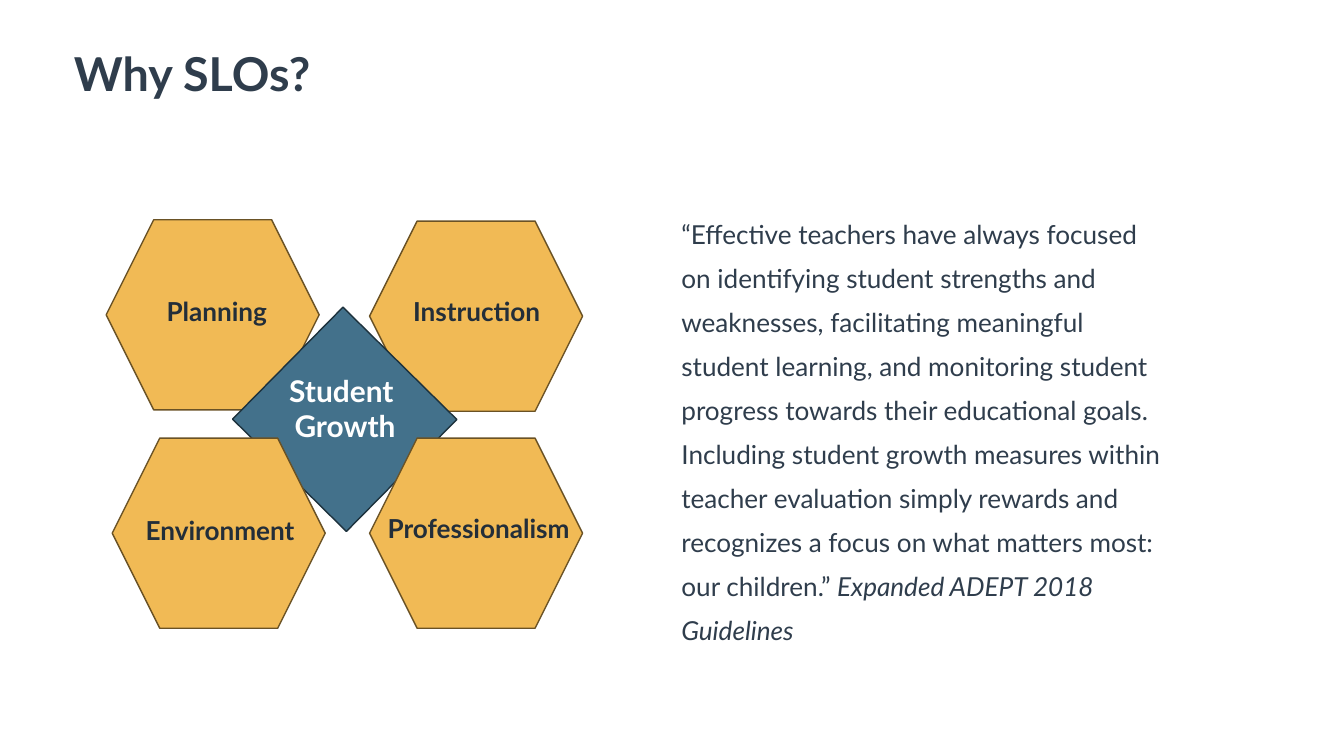
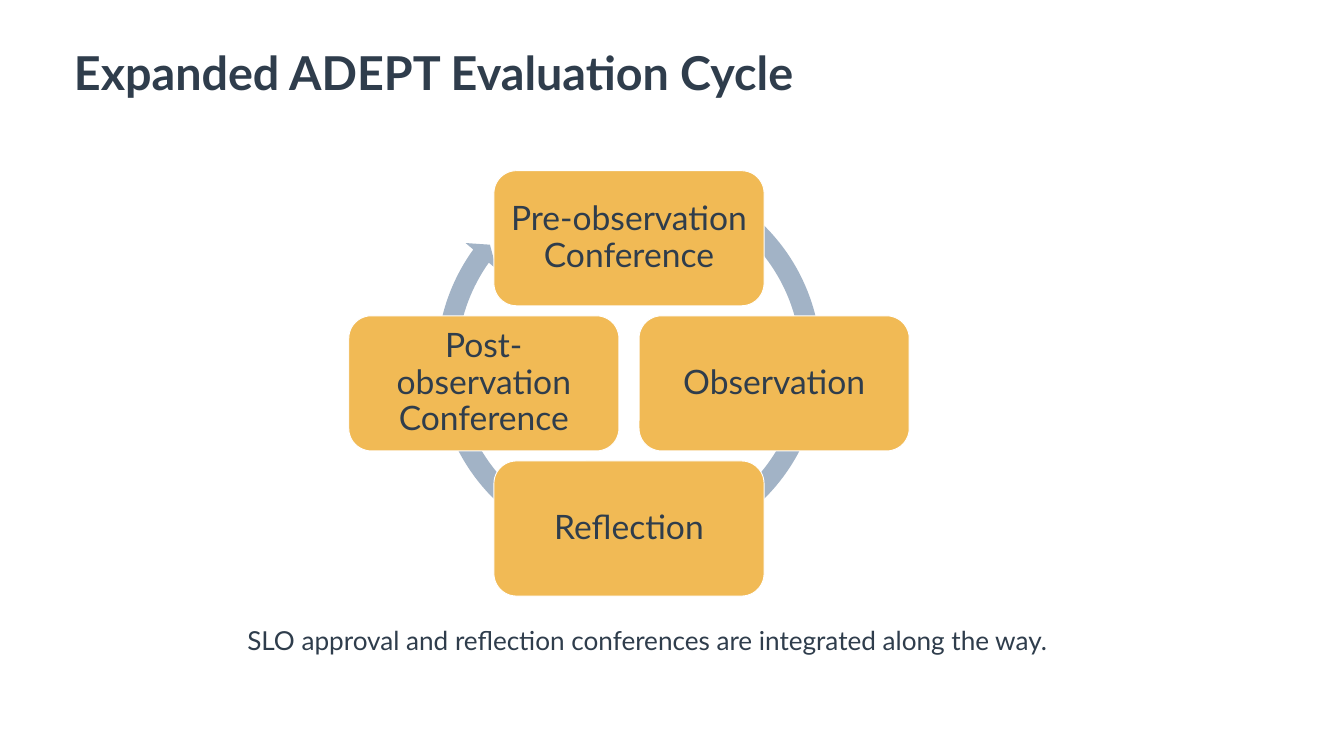
from dataclasses import dataclass
from typing import NamedTuple

from pptx import Presentation
from pptx.dml.color import RGBColor
from pptx.enum.shapes import MSO_SHAPE
from pptx.enum.text import MSO_ANCHOR, MSO_AUTO_SIZE, PP_ALIGN
from pptx.oxml.xmlchemy import OxmlElement
from pptx.util import Emu, Pt

PX = 9144  # 100 px to the inch


# Shared look
@dataclass(frozen=True)
class Theme:
    font: str = "Lato"
    ink: str = "2F3D4C"
    label: str = "232E39"
    white: str = "FFFFFF"
    amber: str = "F1BA55"
    amber_edge: str = "6A5225"
    teal: str = "43718B"
    teal_edge: str = "1D323D"
    arc: str = "A2B3C6"
    title_size: int = 50
    body_size: int = 28
    center_size: int = 32
    cycle_size: int = 36


class Box(NamedTuple):
    left: int
    top: int
    width: int
    height: int

    def emu(self) -> list[Emu]:
        return [Emu(v * PX) for v in self]


class Run(NamedTuple):
    text: str
    italic: bool = False


class Style(NamedTuple):
    size: int
    color: str
    bold: bool = False
    align: PP_ALIGN = PP_ALIGN.LEFT
    spacing: float = 1.0


class Domain(NamedTuple):
    name: str
    hexagon: tuple[int, int]
    text: Box


class Step(NamedTuple):
    name: str
    dx: int
    dy: int


T = Theme()
TITLE = Style(T.title_size, T.ink, bold=True)
QUOTE = Style(T.body_size, T.ink, spacing=1.4)
NOTE = Style(T.body_size, T.ink, spacing=0.9)
DOMAIN = Style(T.body_size, T.label, bold=True)
CENTER = Style(T.center_size, T.white, bold=True, align=PP_ALIGN.CENTER)
CYCLE = Style(T.cycle_size, T.ink, align=PP_ALIGN.CENTER, spacing=0.9)

HEX_W, HEX_H = 317, 283
UPPER = [
    Domain("Planning", (158, 327), Box(238, 434, 275, 78)),
    Domain("Instruction", (550, 329), Box(605, 434, 307, 57)),
]
LOWER = [
    Domain("Environment", (167, 652), Box(207, 760, 376, 57)),
    Domain("Professionalism", (550, 652), Box(567, 757, 312, 57)),
]

STEPS = [
    Step("Pre-observation Conference", 0, -1),
    Step("Observation", 1, 0),
    Step("Reflection", 0, 1),
    Step("Post-observation Conference", -1, 0),
]
STEP_BOX = Box(735, 470, 402, 201)  # box at the centre of the cycle
STEP_SHIFT = 216


# Drawing helpers
def set_attrs(obj, formats: dict) -> None:
    for name, value in formats.items():
        setattr(obj, name, value)


def write(tf, paragraphs: list[list[Run]], style: Style) -> None:
    for i, runs in enumerate(paragraphs):
        p = tf.add_paragraph() if i else tf.paragraphs[0]
        set_attrs(p, {"alignment": style.align, "line_spacing": style.spacing,
                      "space_before": Pt(0)})
        for run in runs:
            r = p.add_run()
            r.text = run.text
            set_attrs(r.font, {"name": T.font, "size": Pt(style.size),
                               "bold": style.bold, "italic": run.italic})
            r.font.color.rgb = RGBColor.from_string(style.color)


def fill_placeholder(sp, box: Box, runs: list[Run], style: Style) -> None:
    set_attrs(sp, dict(zip(("left", "top", "width", "height"), box.emu())))
    tf = sp.text_frame
    set_attrs(tf, {"word_wrap": True, "auto_size": MSO_AUTO_SIZE.NONE,
                   "vertical_anchor": MSO_ANCHOR.TOP})
    pPr = tf.paragraphs[0]._p.get_or_add_pPr()
    for name in ("marL", "indent"):
        pPr.set(name, "0")
    pPr.append(OxmlElement("a:buNone"))
    write(tf, [runs], style)


def add_slide(prs, title: str, title_top: int, body: Box,
              runs: list[Run], style: Style):
    s = prs.slides.add_slide(prs.slide_layouts[1])
    fill_placeholder(s.shapes.title, Box(100, title_top, 1799, 120),
                     [Run(title)], TITLE)
    fill_placeholder(s.placeholders[1], body, runs, style)
    return s


def add_shape(shapes, kind: MSO_SHAPE, box: Box, fill: str,
              edge: str = "", edge_width: float = 1.5):
    sp = shapes.add_shape(kind, *box.emu())
    sp.shadow.inherit = False
    sp.fill.solid()
    sp.fill.fore_color.rgb = RGBColor.from_string(fill)
    if edge:
        sp.line.color.rgb = RGBColor.from_string(edge)
        sp.line.width = Pt(edge_width)
    else:
        sp.line.fill.background()
    return sp


def add_text(shapes, box: Box, lines: list[str], style: Style) -> None:
    tf = shapes.add_textbox(*box.emu()).text_frame
    tf.word_wrap = True
    write(tf, [[Run(line)] for line in lines], style)


def add_domain(shapes, domain: Domain) -> None:
    add_shape(shapes, MSO_SHAPE.HEXAGON, Box(*domain.hexagon, HEX_W, HEX_H),
              T.amber, T.amber_edge)
    add_text(shapes, domain.text, [domain.name], DOMAIN)


def add_step(shapes, step: Step) -> None:
    box = STEP_BOX._replace(left=STEP_BOX.left + step.dx * STEP_SHIFT,
                            top=STEP_BOX.top + step.dy * STEP_SHIFT)
    sp = add_shape(shapes, MSO_SHAPE.ROUNDED_RECTANGLE, box, T.amber, T.white, 1)
    tf = sp.text_frame
    margins = ("margin_left", "margin_top", "margin_right", "margin_bottom")
    set_attrs(tf, {"word_wrap": True, "vertical_anchor": MSO_ANCHOR.MIDDLE,
                   **dict.fromkeys(margins, Emu(15 * PX))})
    write(tf, [[Run(step.name)]], CYCLE)


# Slides
def why_slos(prs) -> None:
    quote = [
        Run("“Effective teachers have always focused on identifying student "
            "strengths and weaknesses, facilitating meaningful student learning, "
            "and monitoring student progress towards their educational goals. "
            "Including student growth measures within teacher evaluation simply "
            "rewards and recognizes a focus on what matters most: our children.” "),
        Run("Expanded ADEPT 2018 Guidelines", italic=True),
    ]
    s = add_slide(prs, "Why SLOs?", 62, Box(1004, 302, 738, 706), quote, QUOTE)
    for domain in UPPER:
        add_domain(s.shapes, domain)
    # The diamond covers the upper hexagons; the lower ones cover it
    diamond = add_shape(s.shapes, MSO_SHAPE.RECTANGLE, Box(396, 505, 234, 238),
                        T.teal, T.teal_edge)
    diamond.rotation = 314.6
    add_text(s.shapes, Box(361, 549, 305, 118), ["Student ", "Growth"], CENTER)
    for domain in LOWER:
        add_domain(s.shapes, domain)


def evaluation_cycle(prs) -> None:
    note = "SLO approval and reflection conferences are integrated along the way."
    s = add_slide(prs, "Expanded ADEPT Evaluation Cycle", 60,
                  Box(358, 929, 1283, 100), [Run(note)], NOTE)
    cycle = s.shapes.add_group_shape().shapes
    arrow = add_shape(cycle, MSO_SHAPE.CIRCULAR_ARROW, Box(635, 238, 602, 602), T.arc)
    for i, value in enumerate((0.05, 2.73, 129.39, 179.58, 0.05)):
        arrow.adjustments[i] = value
    for step in STEPS:
        add_step(cycle, step)


def main() -> None:
    prs = Presentation()
    set_attrs(prs, {"slide_width": Emu(2000 * PX), "slide_height": Emu(1125 * PX)})
    why_slos(prs)
    evaluation_cycle(prs)
    prs.save("out.pptx")


if __name__ == "__main__":
    main()
